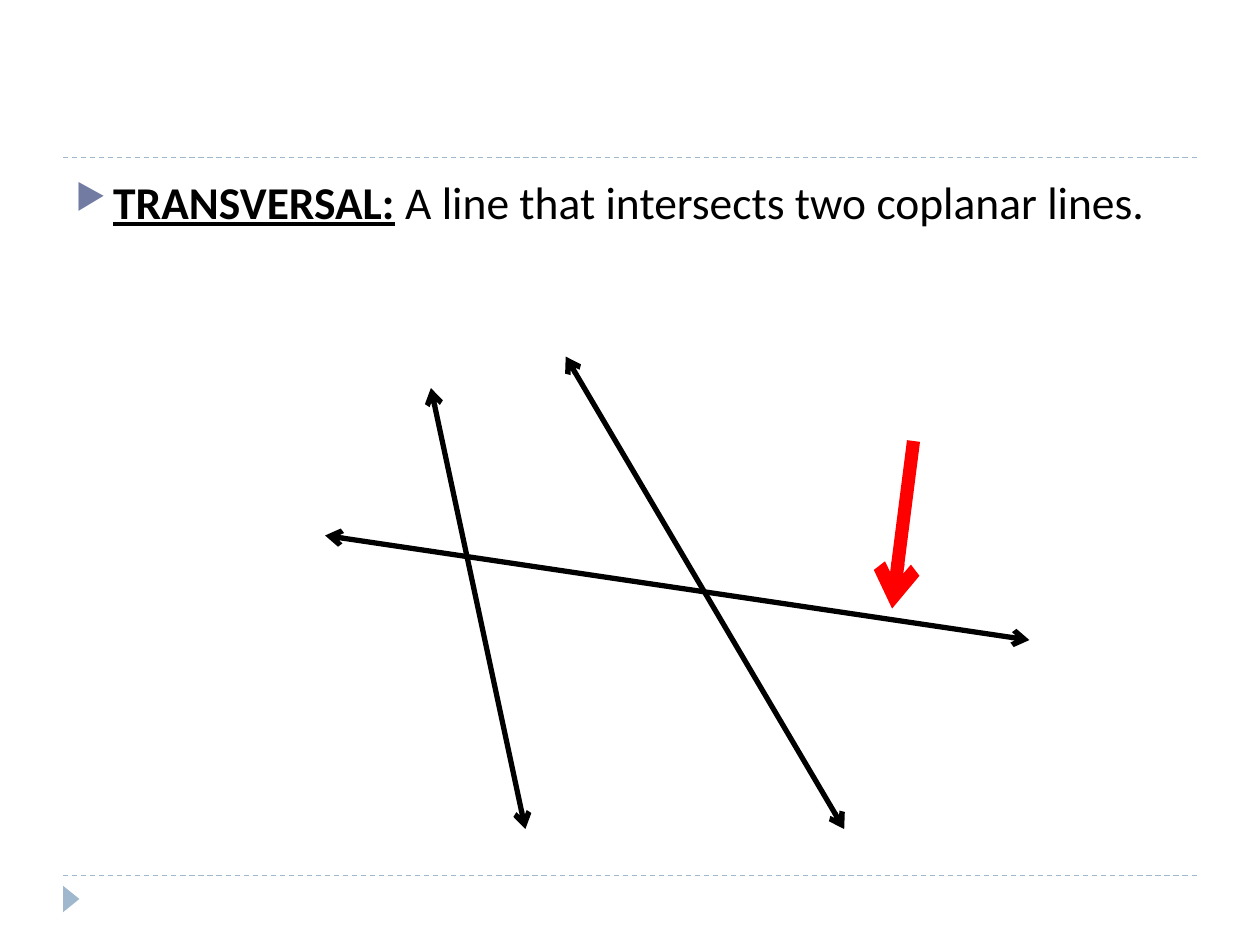
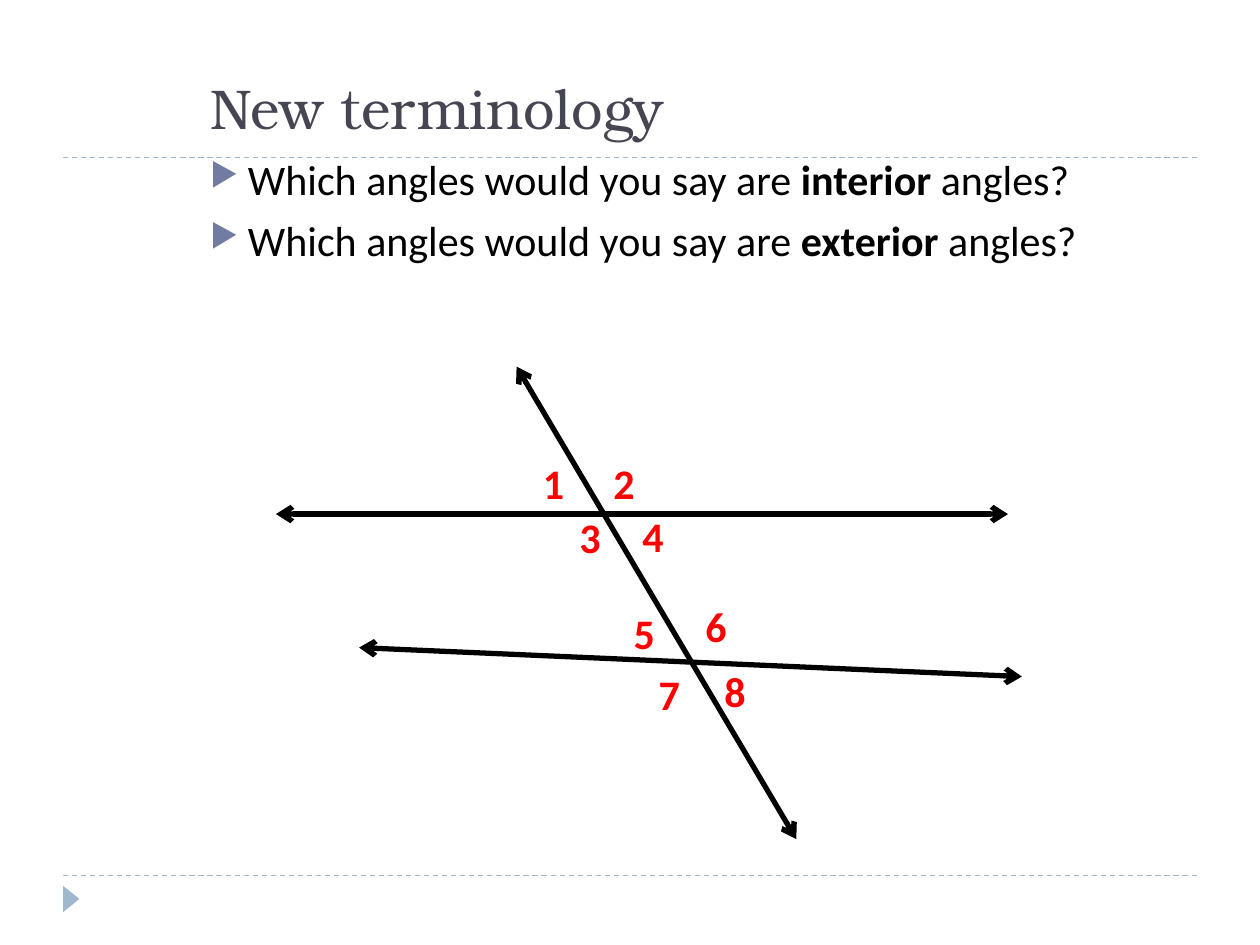
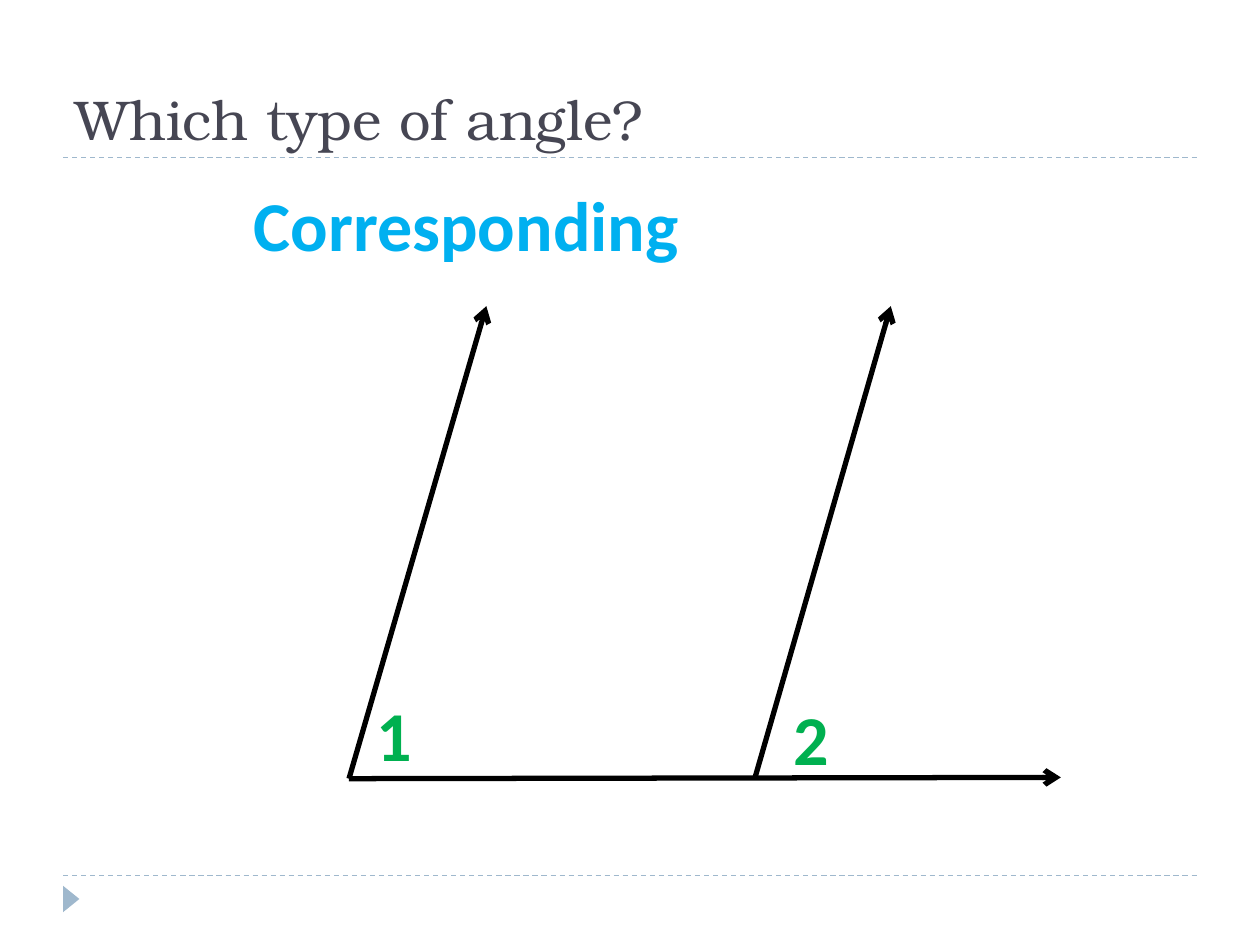
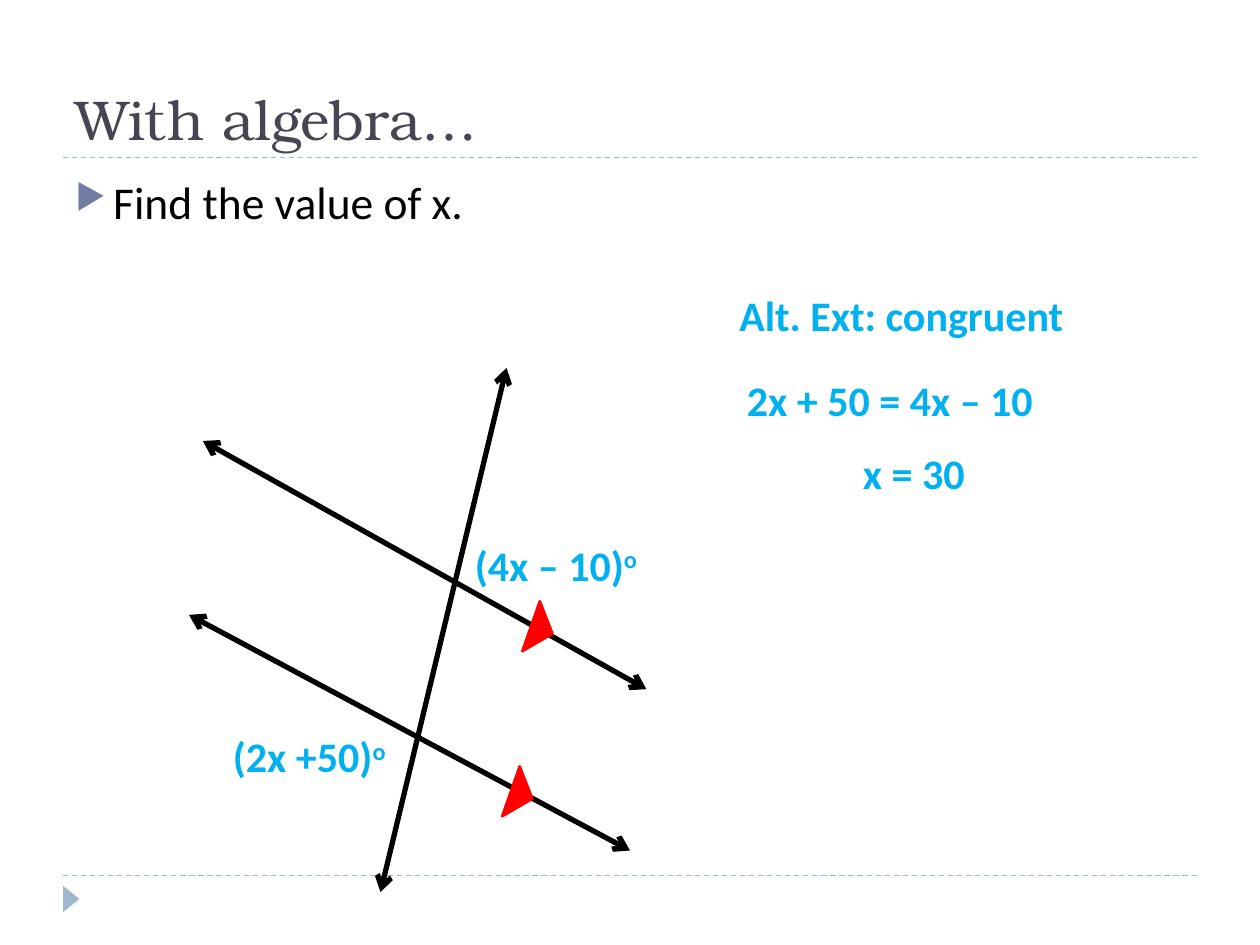
import pptx
import pptx.dml.color
import pptx.enum.dml
import pptx.enum.shapes
import pptx.enum.text
import pptx.oxml
import pptx.oxml.ns
import pptx.util

SCALE = 9144  # EMU in one px, 100 px to the inch

RGBColor = pptx.dml.color.RGBColor
BLACK = RGBColor(0x00, 0x00, 0x00)
WHITE = RGBColor(0xFF, 0xFF, 0xFF)
RED = RGBColor(0xFF, 0x00, 0x00)
GREEN = RGBColor(0x00, 0xB0, 0x50)
SKY = RGBColor(0x00, 0xB0, 0xF0)
SLATE = RGBColor(0x46, 0x46, 0x53)
PALE_BLUE = RGBColor(0x9F, 0xB8, 0xCD)
BULLET_COLOR = RGBColor(0x72, 0x7C, 0xA3)

# Text formats
TITLE = {"name": "TeX Gyre Bonum", "size": pptx.util.Pt(32), "color": SLATE}
BODY = {"name": "Calibri", "size": pptx.util.Pt(26), "color": BLACK}
SMALL_BODY = {**BODY, "size": pptx.util.Pt(24)}
ANGLE = {**SMALL_BODY, "color": RED, "bold": True}
ALGEBRA = {**ANGLE, "color": SKY}
BIG_ANGLE = {**ANGLE, "size": pptx.util.Pt(40), "color": GREEN}
ANSWER = {**BIG_ANGLE, "color": SKY}
BOLD = {"bold": True}
TERM = {"bold": True, "underline": True}
RAISED = {"baseline": "30000"}

BOTTOM = pptx.enum.text.MSO_ANCHOR.BOTTOM
TOP = pptx.enum.text.MSO_ANCHOR.TOP
CENTER = pptx.enum.text.PP_ALIGN.CENTER
TRIANGLE = pptx.enum.shapes.MSO_SHAPE.ISOSCELES_TRIANGLE
DASH = pptx.enum.dml.MSO_LINE.DASH
BOTH_ENDS = ("headEnd", "tailEnd")
BULLET_PARTS = (
    f'<a:buClr {{ns}}><a:srgbClr val="{BULLET_COLOR}"/></a:buClr>',
    '<a:buSzPct {ns} val="76000"/>',
    '<a:buChar {ns} char="▶"/>',
)
NS = pptx.oxml.ns.nsdecls("a")


def add_text(page, place, paragraphs, base, bullets=False, anchor=TOP, align=None):
    """Each paragraph is a list of (text, extra format) pairs."""
    box = page.shapes.add_textbox(*(value * SCALE for value in place))
    frame = box.text_frame
    frame.word_wrap = True
    frame.vertical_anchor = anchor
    for index, pieces in enumerate(paragraphs):
        para = frame.add_paragraph() if index else frame.paragraphs[0]
        para.alignment = align
        if bullets:
            para.space_before = pptx.util.Pt(6)
            properties = para._p.get_or_add_pPr()
            properties.set("marL", str(30 * SCALE))
            properties.set("indent", str(-30 * SCALE))
            for part in BULLET_PARTS:
                properties.append(pptx.oxml.parse_xml(part.format(ns=NS)))
        for text, extra in pieces:
            span = para.add_run()
            span.text = text
            for key, value in {**base, **extra}.items():
                if key == "color":
                    span.font.color.rgb = value
                elif key == "baseline":
                    span._r.get_or_add_rPr().set(key, value)
                else:
                    setattr(span.font, key, value)


def add_line(page, ends, color, width, arrows=(), dash=None):
    line = page.shapes.add_connector(
        pptx.enum.shapes.MSO_CONNECTOR.STRAIGHT, *(value * SCALE for value in ends))
    line.line.color.rgb = color
    line.line.width = pptx.util.Pt(width)
    line.line.dash_style = dash
    outline = line.line._get_or_add_ln()
    for arrow in arrows:
        outline.append(pptx.oxml.parse_xml(f'<a:{arrow} {NS} type="arrow"/>'))
    line._element.spPr.append(pptx.oxml.parse_xml(f"<a:effectLst {NS}/>"))


deck = pptx.Presentation()
deck.slide_width = 1000 * SCALE
deck.slide_height = 750 * SCALE

# Shared frame: background, two dashed rules, footer marker
pages = [deck.slides.add_slide(deck.slide_layouts[6]) for _ in range(4)]
triangles = []
for page in pages:
    page.background.fill.solid()
    page.background.fill.fore_color.rgb = WHITE
    for y in (695, 125):
        add_line(page, (50, y, 950, y), PALE_BLUE, 0.75, dash=DASH)
    triangles.append((page, (46, 707, 21, 13), 90, PALE_BLUE, None))
definition, terminology, angle_type, algebra = pages

# Titles
TITLE_PLACE = (50, 17, 900, 108)
for page, place, title in (
    (terminology, (157, 30, 820, 87), "New terminology"),
    (angle_type, TITLE_PLACE, "Which type of angle?"),
    (algebra, TITLE_PLACE, "With algebra…"),
):
    add_text(page, place, [[(title, {})]], TITLE, anchor=BOTTOM)

# Bulleted text
BODY_PLACE = (50, 133, 900, 540)
add_text(definition, BODY_PLACE, [[
    ("TRANSVERSAL:", TERM),
    (" A line that intersects two coplanar lines.", {}),
]], BODY, bullets=True)
add_text(terminology, (157, 117, 820, 567), [
    [("Which angles would you say are ", {}), (kind, BOLD), ("angles?", {})]
    for kind in ("interior ", "exterior ")
], SMALL_BODY, bullets=True)
add_text(algebra, BODY_PLACE, [[("Find the value of x.", {})]], BODY, bullets=True)

# Lines and rays of the figures
for page, arrows, figure in (
    (definition, BOTH_ENDS, (
        (258, 425, 817, 508), (670, 658, 449, 283), (342, 308, 417, 658))),
    (terminology, BOTH_ENDS, (
        (219, 408, 800, 408), (632, 666, 410, 291), (285, 514, 811, 537))),
    (angle_type, ("headEnd",), (
        (842, 617, 277, 618), (386, 243, 277, 618), (707, 243, 599, 618))),
    (algebra, BOTH_ENDS, (
        (500, 675, 150, 488), (513, 547, 161, 350), (302, 708, 402, 292))),
):
    for ends in figure:
        add_line(page, ends, BLACK, 3, arrows)

# Pointer to the transversal
add_line(definition, (725, 350, 708, 483), RED, 7.5, ("tailEnd",))

# Numbered angles at the two crossings
angle_corners = ((421, 358), (477, 358), (450, 401), (500, 400),
                 (493, 477), (550, 472), (513, 526), (565, 523))
for number, (left, top) in enumerate(angle_corners, 1):
    add_text(terminology, (left, top, 67, 50), [[(str(number), {})]], ANGLE)

# Corresponding angles
for number, (left, top) in enumerate(((289, 544), (620, 547)), 1):
    add_text(angle_type, (left, top, 67, 77), [[(str(number), {})]], BIG_ANGLE)
add_text(angle_type, (142, 139, 456, 77), [[("Corresponding", {})]], ANSWER, align=CENTER)

# Angle expressions and the solution
for place, pieces in (
    ((367, 423, 217, 50), [("(4x – 10)", {}), ("o", RAISED)]),
    ((175, 575, 217, 50), [("(2x +50)", {}), ("o", RAISED)]),
    ((577, 225, 356, 50), [("Alt. Ext: congruent", {})]),
    ((583, 292, 356, 50), [("2x + 50 = 4x – 10", {})]),
    ((675, 350, 192, 50), [("x = 30", {})]),
):
    add_text(algebra, place, [pieces], ALGEBRA)

# Footer markers and marks of parallel lines
for left, top in ((409, 491), (393, 622)):
    triangles.append((algebra, (left, top, 42, 18), 109.3, RED, RED))
for page, place, rotation, fill, outline in triangles:
    marker = page.shapes.add_shape(TRIANGLE, *(value * SCALE for value in place))
    marker.shadow.inherit = False
    marker.rotation = rotation
    marker.fill.solid()
    marker.fill.fore_color.rgb = fill
    if outline is None:
        marker.line.fill.background()
    else:
        marker.line.color.rgb = outline
        marker.line.width = pptx.util.Pt(1.5)

deck.save("out.pptx")
